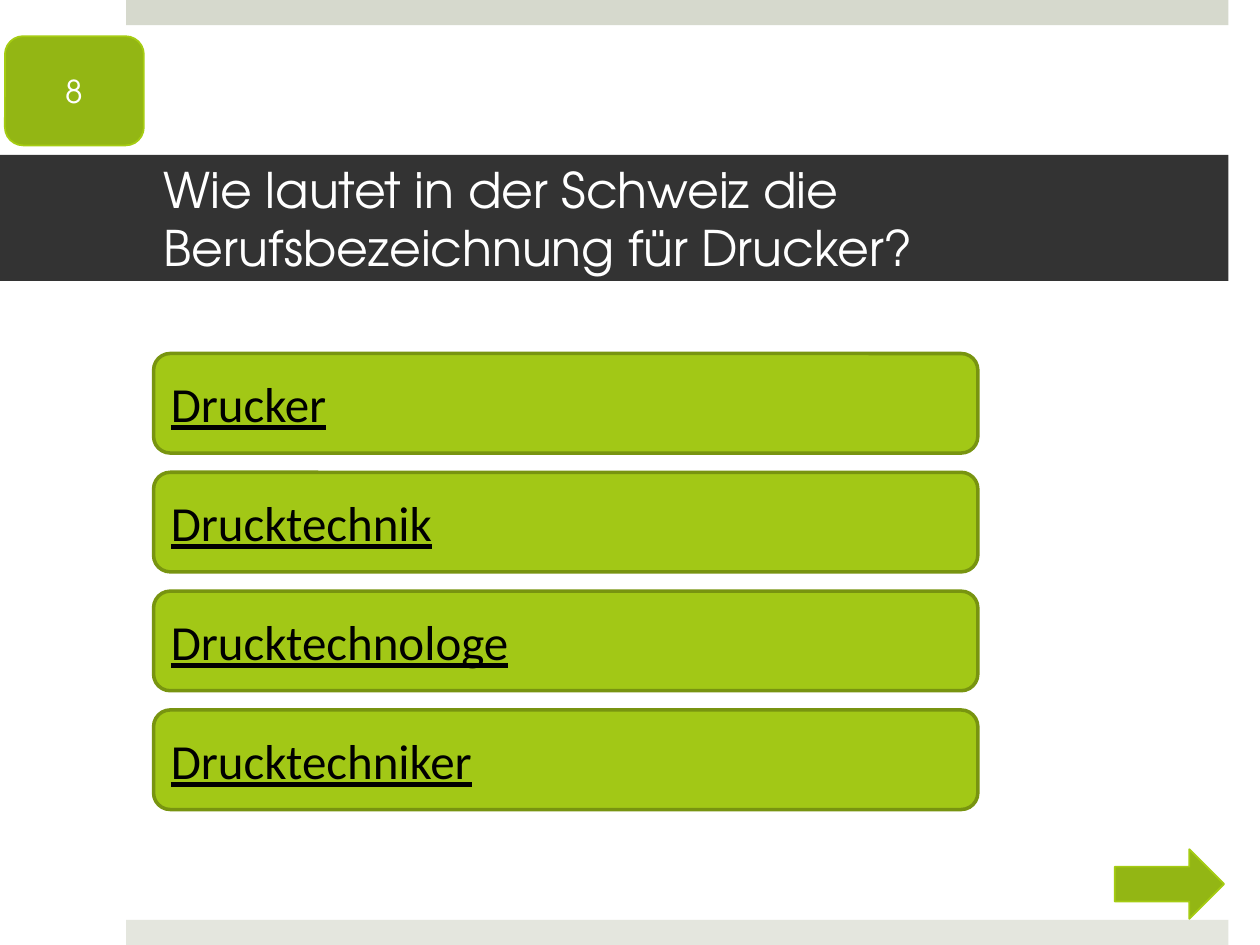
import pptx
import pptx.dml.color
import pptx.enum.shapes
import pptx.enum.text
import pptx.util

Pt = pptx.util.Pt
RGBColor = pptx.dml.color.RGBColor
SHAPE = pptx.enum.shapes.MSO_SHAPE
ALIGN = pptx.enum.text.PP_ALIGN
MIDDLE = pptx.enum.text.MSO_ANCHOR.MIDDLE

WHITE = RGBColor(0xFF, 0xFF, 0xFF)
BLACK = RGBColor(0, 0, 0)
CHARCOAL = RGBColor(0x33, 0x33, 0x33)
TOP_GREY = RGBColor(0xD6, 0xD9, 0xCD)
BOTTOM_GREY = RGBColor(0xE4, 0xE6, 0xDE)
ANSWER_GREEN = RGBColor(0xA2, 0xC8, 0x16)
ANSWER_EDGE = RGBColor(0x78, 0x94, 0x10)
BUTTON_GREEN = RGBColor(0x93, 0xB6, 0x14)
BUTTON_EDGE = RGBColor(0xA5, 0xCC, 0x12)

HEADING_FONT = "TeX Gyre Adventor"
ANSWER_FONT = "Calibri"
ANSWERS = ["Drucker", "Drucktechnik", "Drucktechnologe", "Drucktechniker"]


def add_panel(slide, preset, box, fill, edge=None, edge_width=1):
    panel = slide.shapes.add_shape(preset, *map(Pt, box))
    panel.shadow.inherit = False
    panel.fill.solid()
    panel.fill.fore_color.rgb = fill
    if edge is None:
        panel.line.fill.background()
    else:
        panel.line.color.rgb = edge
        panel.line.width = Pt(edge_width)
    return panel


def write(frame, text, font, size, color, align, underline=None):
    frame.word_wrap = True
    frame.vertical_anchor = MIDDLE
    paragraph = frame.paragraphs[0]
    paragraph.alignment = align
    run = paragraph.add_run()
    run.text = text
    run.font.name = font
    run.font.size = Pt(size)
    run.font.color.rgb = color
    run.font.underline = underline
    return paragraph


def add_bars(slide, box):
    left, top, width, height = box
    thickness = 14.4
    add_panel(slide, SHAPE.RECTANGLE, (left, top, width, thickness), TOP_GREY)
    add_panel(slide, SHAPE.RECTANGLE,
              (left, top + height - thickness, width, thickness), BOTTOM_GREY)


def add_question(slide, box, question):
    title = slide.shapes.title
    title.left, title.top, title.width, title.height = map(Pt, box)
    title.fill.solid()
    title.fill.fore_color.rgb = CHARCOAL
    frame = title.text_frame
    frame.auto_size = pptx.enum.text.MSO_AUTO_SIZE.NONE
    frame.margin_left, frame.margin_right = Pt(93.6), Pt(21.6)
    frame.margin_top = frame.margin_bottom = Pt(3.6)
    write(frame, question, HEADING_FONT, 28, WHITE, ALIGN.LEFT)


def add_answers(slide, box, answers):
    left, top, width, height = box
    gap = 11
    answer_height = (height - gap * (len(answers) - 1)) / len(answers)
    for row, answer in enumerate(answers):
        answer_box = (left, top + row * (answer_height + gap), width, answer_height)
        button = add_panel(slide, SHAPE.ROUNDED_RECTANGLE, answer_box,
                           ANSWER_GREEN, ANSWER_EDGE, 2)
        paragraph = write(button.text_frame, answer, ANSWER_FONT, 28, BLACK,
                          ALIGN.LEFT, underline=True)
        properties = paragraph._p.get_or_add_pPr()
        properties.set("marL", str(Pt(27)))
        properties.set("indent", str(Pt(-27)))


def add_number(slide, box, number):
    badge = add_panel(slide, SHAPE.ROUNDED_RECTANGLE, box, BUTTON_GREEN, BUTTON_EDGE)
    write(badge.text_frame, number, HEADING_FONT, 18, WHITE, ALIGN.CENTER)


def add_next_arrow(slide, box):
    add_panel(slide, SHAPE.RIGHT_ARROW, box, BUTTON_GREEN, BUTTON_EDGE)


def main():
    deck = pptx.Presentation()
    deck.slide_width, deck.slide_height = Pt(720), Pt(540)
    slide = deck.slides.add_slide(deck.slide_layouts[5])
    add_bars(slide, (72, 0, 630, 540))
    add_question(slide, (0, 88.5, 702, 72),
                 "Wie lautet in der Schweiz die Berufsbezeichnung für Drucker?")
    add_answers(slide, (87.8, 202, 471, 260.6), ANSWERS)
    add_number(slide, (2.8, 20.7, 79.4, 62.4), "8")
    add_next_arrow(slide, (637, 485.3, 62.5, 39.8))
    deck.save("out.pptx")


if __name__ == "__main__":
    main()
